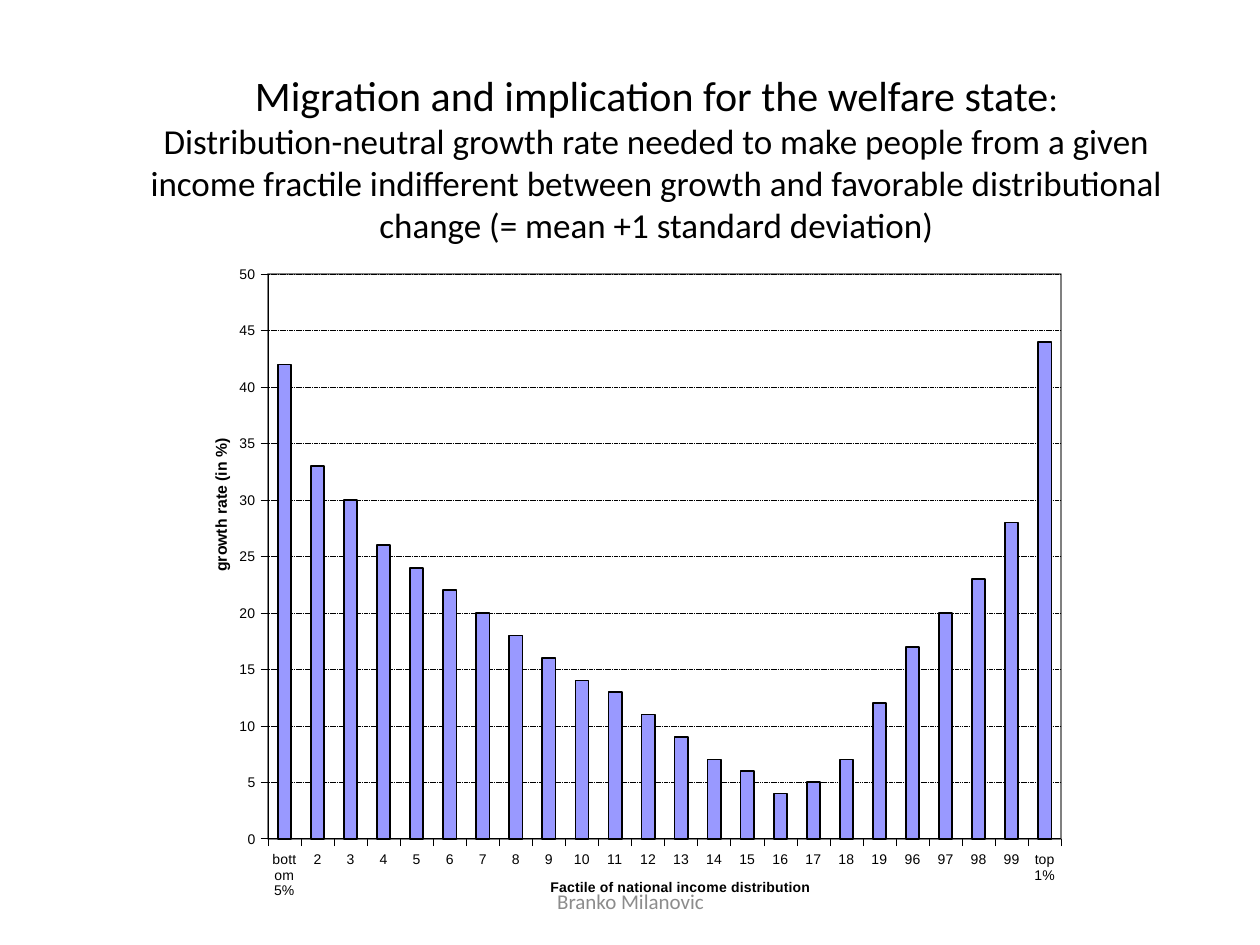
"""Build a slide with a column chart of growth rates by income fractile."""
from dataclasses import dataclass

from lxml.etree import SubElement
from pptx import Presentation
from pptx.chart.chart import Chart
from pptx.chart.data import CategoryChartData
from pptx.dml.color import RGBColor
from pptx.enum.chart import XL_CHART_TYPE, XL_TICK_MARK
from pptx.enum.dml import MSO_LINE
from pptx.enum.text import MSO_ANCHOR, MSO_AUTO_SIZE, PP_ALIGN
from pptx.oxml import parse_xml
from pptx.oxml.ns import nsdecls, qn
from pptx.util import Inches, Pt

BLACK = RGBColor(0x00, 0x00, 0x00)
GRAY = RGBColor(0x8C, 0x8C, 0x8C)
LILAC = RGBColor(0x99, 0x99, 0xFF)

CATEGORIES = ["bottom 5%", *map(str, range(2, 20)), *map(str, range(96, 100)), "top 1%"]
GROWTH = [42, 33, 30, 26, 24, 22, 20, 18, 16, 14, 13, 11,
          9, 7, 6, 4, 5, 7, 12, 17, 20, 23, 28, 44]


@dataclass
class Run:
    text: str
    size: float
    color: RGBColor = BLACK


@dataclass
class AxisTitle:
    text: str
    size: float
    x: float
    y: float


HEADING = [
    [Run("Migration and implication for the welfare state", 24), Run(":", 20)],
    [Run("Distribution-neutral growth rate needed to make people from a given "
         "income fractile indifferent between growth and favorable distributional "
         "change (= mean +1 standard deviation)", 20)],
]
FOOTER = [[Run("Branko Milanovic", 12, GRAY)]]
CATEGORY_TITLE = AxisTitle("Factile of national income distribution", 8, 0.4, 0.95)
VALUE_TITLE = AxisTitle("growth rate (in %)", 9, 0.01, 0.28)


def place(sp, left: float, top: float, width: float, height: float) -> None:
    """Move and size a shape in inches."""
    sp.left, sp.top = Inches(left), Inches(top)
    sp.width, sp.height = Inches(width), Inches(height)


def style_font(font, name: str, size: float, color: RGBColor, bold: bool = False) -> None:
    """Set the face, size, colour and weight of a font."""
    font.name, font.size, font.bold = name, Pt(size), bold
    font.color.rgb = color


def write(tf, paragraphs: list[list[Run]], anchor: MSO_ANCHOR) -> None:
    """Fill a text frame with centred paragraphs."""
    tf.word_wrap = True
    tf.vertical_anchor = anchor
    for i, runs in enumerate(paragraphs):
        p = tf.add_paragraph() if i else tf.paragraphs[0]
        p.alignment = PP_ALIGN.CENTER
        for run in runs:
            r = p.add_run()
            r.text = run.text
            style_font(r.font, "Calibri", run.size, run.color)


def set_layout(parent, index: int, **settings) -> None:
    """Give a chart part a manual layout as fractions of the chart."""
    for old in parent.findall(qn("c:layout")):
        parent.remove(old)
    layout = parse_xml(f"<c:layout {nsdecls('c')}/>")
    manual = SubElement(layout, qn("c:manualLayout"))
    for tag, value in settings.items():
        SubElement(manual, qn(f"c:{tag}"), val=str(value))
    parent.insert(index, layout)


def style_line(line, width: float) -> None:
    """Draw a black line of the given width."""
    line.color.rgb = BLACK
    line.width = Pt(width)


def style_axis(axis, title: AxisTitle) -> None:
    """Format an axis and its title."""
    axis.major_tick_mark = XL_TICK_MARK.OUTSIDE
    axis.minor_tick_mark = XL_TICK_MARK.NONE
    style_font(axis.tick_labels.font, "Arial", 8, BLACK)
    style_line(axis.format.line, 0.25)
    r = axis.axis_title.text_frame.paragraphs[0].add_run()
    r.text = title.text
    style_font(r.font, "Arial", title.size, BLACK, bold=True)
    set_layout(axis.axis_title.element, 1,
               xMode="edge", yMode="edge", x=title.x, y=title.y)


def style_plot_area(chart: Chart) -> None:
    """Place the plot area and give it a white fill and gray frame."""
    area = chart.element.find(f".//{qn('c:plotArea')}")
    set_layout(area, 0, layoutTarget="inner", xMode="edge", yMode="edge",
               x=0.079, y=0.034, w=0.91, h=0.86)
    area.append(parse_xml(
        f"<c:spPr {nsdecls('c', 'a')}>"
        '<a:solidFill><a:srgbClr val="FFFFFF"/></a:solidFill>'
        '<a:ln w="12700"><a:solidFill><a:srgbClr val="808080"/></a:solidFill></a:ln>'
        "</c:spPr>"))


def add_growth_chart(s) -> None:
    """Add the column chart."""
    data = CategoryChartData(number_format="0")
    data.categories = CATEGORIES
    data.add_series("Series 1", GROWTH)
    chart = s.shapes.add_chart(
        XL_CHART_TYPE.COLUMN_CLUSTERED,
        Inches(1.58), Inches(2), Inches(6.92), Inches(5.21), data).chart
    chart.has_legend = False
    chart.has_title = False
    style_font(chart.font, "Arial", 10, BLACK)

    plot = chart.plots[0]
    plot.gap_width = 150
    plot.vary_by_categories = False
    series = plot.series[0]
    series.format.fill.solid()
    series.format.fill.fore_color.rgb = LILAC
    style_line(series.format.line, 1)

    style_axis(chart.category_axis, CATEGORY_TITLE)
    axis = chart.value_axis
    style_axis(axis, VALUE_TITLE)
    axis.minimum_scale, axis.maximum_scale, axis.major_unit = 0, 50, 5
    axis.tick_labels.number_format = "0"
    axis.tick_labels.number_format_is_linked = False
    axis.has_major_gridlines = True
    grid = axis.major_gridlines.format.line
    style_line(grid, 0.25)
    grid.dash_style = MSO_LINE.SQUARE_DOT
    style_plot_area(chart)


def main() -> None:
    """Build and save the slide."""
    prs = Presentation()
    prs.slide_width, prs.slide_height = Inches(10), Inches(7.5)
    s = prs.slides.add_slide(prs.slide_layouts[5])

    footer = s.shapes.add_textbox(Inches(3.42), Inches(6.95), Inches(3.17), Inches(0.4))
    write(footer.text_frame, FOOTER, MSO_ANCHOR.MIDDLE)
    add_growth_chart(s)
    title = s.shapes.title
    place(title, 0.75, 0.5, 8.92, 1.51)
    write(title.text_frame, HEADING, MSO_ANCHOR.TOP)
    title.text_frame.auto_size = MSO_AUTO_SIZE.SHAPE_TO_FIT_TEXT
    prs.save("out.pptx")


if __name__ == "__main__":
    main()
